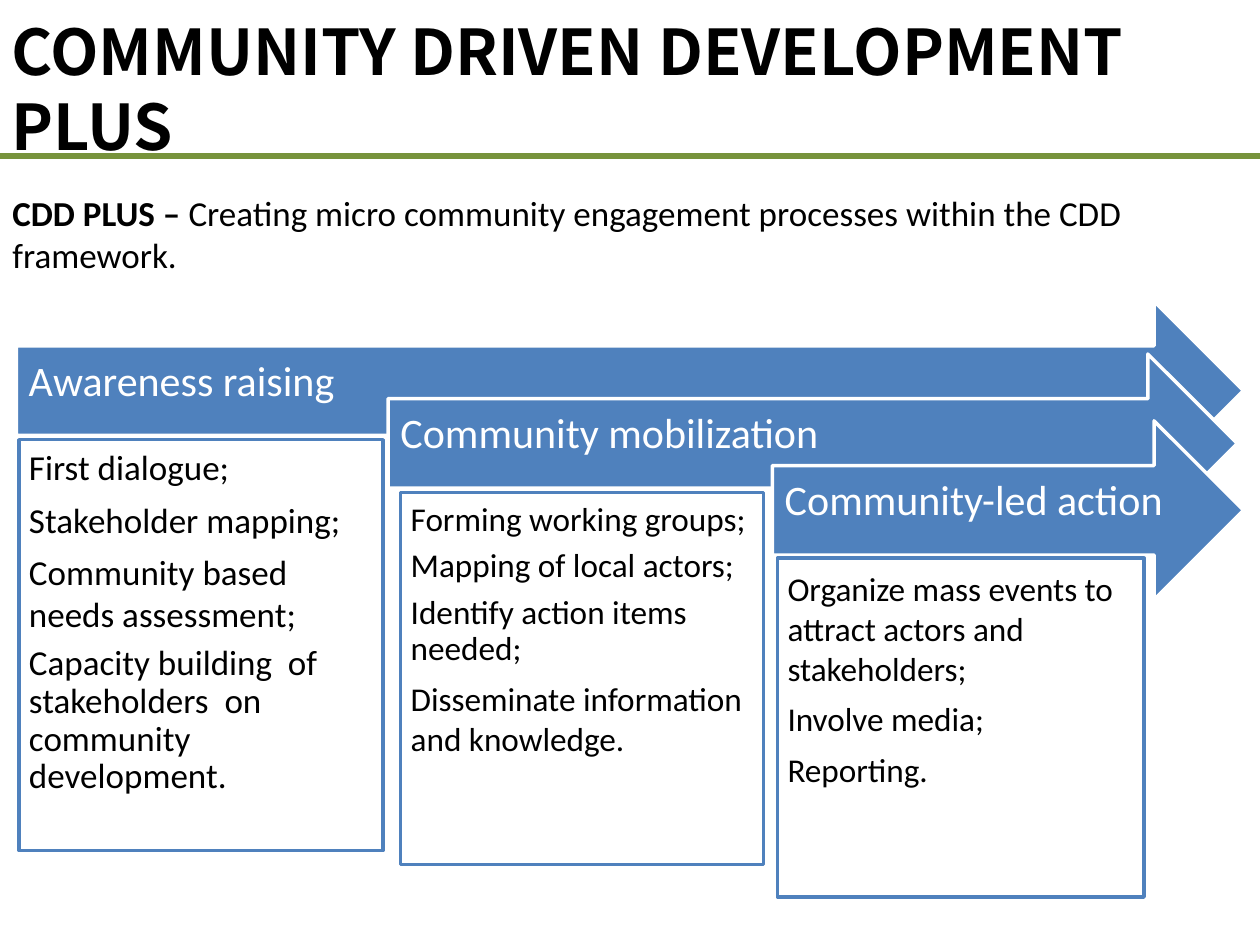
from lxml.etree import SubElement
from pptx import Presentation
from pptx.dml.color import RGBColor
from pptx.enum.shapes import MSO_CONNECTOR as CONNECTOR, MSO_SHAPE as SHAPE
from pptx.enum.text import MSO_ANCHOR as ANCHOR, PP_ALIGN as ALIGN
from pptx.oxml.ns import qn
from pptx.util import Inches, Pt

COLORS = {"black": "000000", "white": "FFFFFF", "blue": "4F81BD", "green": "77933C"}


def color(name):
    return RGBColor.from_string(COLORS[name])


def add_block(kind, place, fill, line, insets, anchor):
    """Add an outlined shape and return its text frame."""
    shape = page.shapes.add_shape(kind, *map(Inches, place))
    shape.shadow.inherit = False
    shape.fill.solid()
    shape.fill.fore_color.rgb = color(fill)
    shape.line.color.rgb = color(line)
    shape.line.width = Pt(2)
    frame = shape.text_frame
    frame.word_wrap = True
    frame.vertical_anchor = anchor
    (frame.margin_left, frame.margin_top,
     frame.margin_right, frame.margin_bottom) = map(Inches, insets)
    return frame


deck = Presentation()
deck.slide_width, deck.slide_height = Inches(10), Inches(7.5)
page = deck.slides.add_slide(deck.slide_layouts[6])

# Title
title = page.shapes.add_textbox(Inches(-0.01), 0, Inches(9.11), Inches(1.25)).text_frame
title.word_wrap = True
title.margin_top = Inches(0.1)
para = title.paragraphs[0]
para.text = "COMMUNITY DRIVEN DEVELOPMENT PLUS"
para.line_spacing = Pt(43)
para.font.name, para.font.size, para.font.bold = "Noto Sans CJK JP", Pt(36), True
para.font.color.rgb = color("black")

# Rule under the title
rule = page.shapes.add_connector(
    CONNECTOR.STRAIGHT, 0, Inches(1.24), Inches(10), Inches(1.24))
rule.line.color.rgb = color("green")
rule.line.width = Pt(3.25)
SubElement(rule._element.spPr, qn("a:effectLst"))

# Introduction
intro = page.shapes.add_textbox(0, Inches(1.47), Inches(10), Inches(0.77)).text_frame
intro.word_wrap = True
para = intro.paragraphs[0]
para.font.name, para.font.size = "Calibri", Pt(20)
para.font.color.rgb = color("black")
span = para.add_run()
span.text = "CDD PLUS – "
span.font.bold = True
para.add_run().text = ("Creating micro community engagement processes "
                       "within the CDD framework.")

# Stages: heading, arrow (left, top, width), detail box, text size,
# and detail lines with their line spacing
stages = [
    ("Awareness raising", (0.13, 2.39, 9.74), (0.15, 3.49, 2.89, 3.26), 20, [
        ("First dialogue;", 0.9),
        ("Stakeholder mapping;", 1.0),
        ("Community based needs assessment;", 1.0),
        ("Capacity building  of stakeholders  on community development.", 0.9)]),
    ("Community mobilization", (3.08, 2.81, 6.74), (3.18, 3.91, 2.88, 2.95), 19, [
        ("Forming working groups;", 0.9),
        ("Mapping of local actors;", 0.9),
        ("Identify action items needed;", 0.9),
        ("Disseminate information and knowledge.", 1.0)]),
    ("Community-led action", (6.13, 3.34, 3.74), (6.17, 4.43, 2.91, 2.69), 19, [
        ("Organize mass events to attract actors and stakeholders;", 1.0),
        ("Involve media;", 1.0),
        ("Reporting.", 1.0)]),
]
for heading, arrow, detail, size, lines in stages:
    # Arrow with the heading
    frame = add_block(SHAPE.RIGHT_ARROW, (*arrow, 1.42), "blue", "white",
                      (0.1, 0.1, 0.28, 0.23), ANCHOR.MIDDLE)
    para = frame.paragraphs[0]
    para.text = heading
    para.alignment = ALIGN.LEFT
    para.line_spacing = 0.9
    para.font.name, para.font.size = "Calibri", Pt(24)
    para.font.color.rgb = color("white")

    # Detail box
    frame = add_block(SHAPE.RECTANGLE, detail, "white", "blue", [0.08] * 4, ANCHOR.TOP)
    for index, (text, spacing) in enumerate(lines):
        para = frame.add_paragraph() if index else frame.paragraphs[0]
        para.text = text
        para.alignment = ALIGN.LEFT
        para.line_spacing = spacing
        para.space_after = Pt(6)
        para.font.name, para.font.size = "Calibri", Pt(size)
        para.font.color.rgb = color("black")

deck.save("out.pptx")
